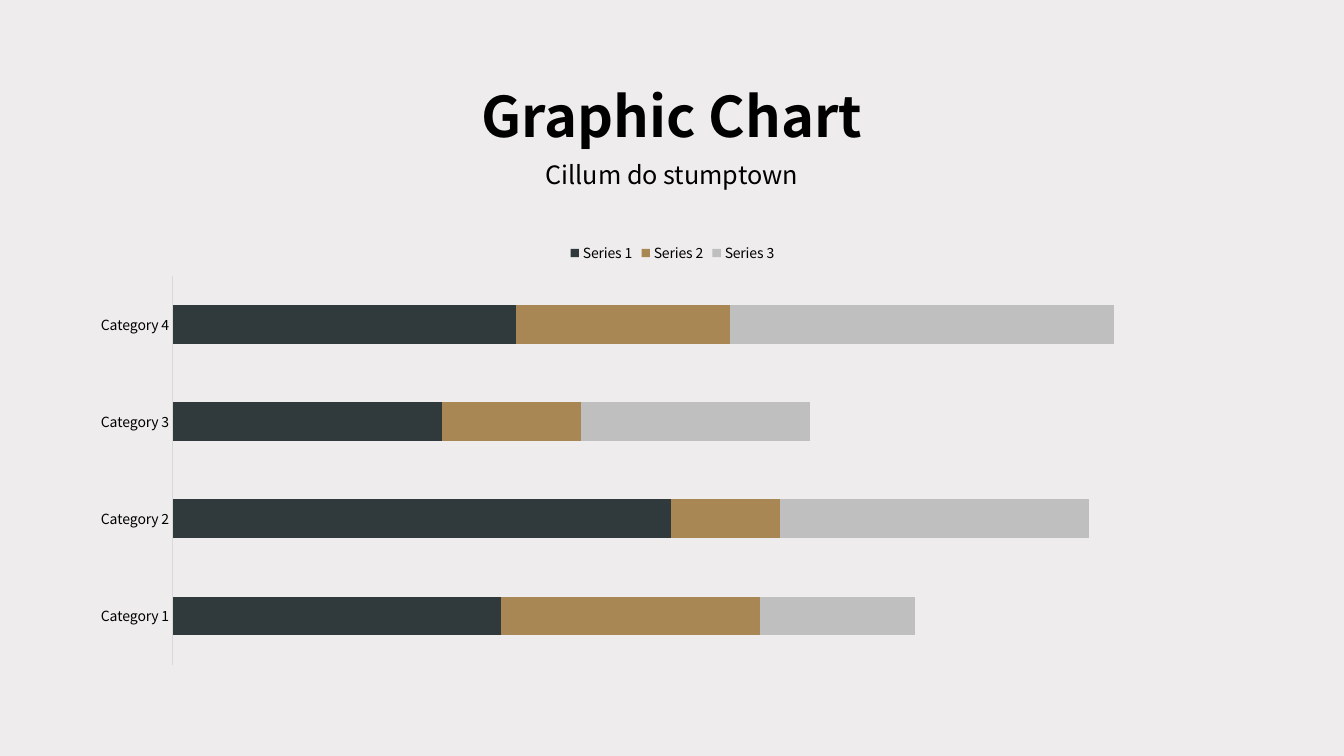
from dataclasses import dataclass

from lxml import etree
from pptx import Presentation
from pptx import util as u
from pptx.chart.data import CategoryChartData
from pptx.dml.color import RGBColor
from pptx.enum import chart as charts, text
from pptx.oxml.ns import qn


@dataclass(frozen=True)
class Theme:
    font: str = "Noto Sans CJK SC"
    background: str = "EEECED"
    ink: str = "000000"
    axis: str = "D9D9D9"
    series: tuple = ("30393C", "A88755", "BFBFBF")
    title_size: int = 40
    subtitle_size: int = 18
    chart_size: int = 10


def rgb(value):
    return RGBColor.from_string(value)


class SlideBuilder:
    def __init__(self, prs, theme):
        self.theme = theme
        self.slide = prs.slides.add_slide(prs.slide_layouts[0])
        fill = self.slide.background.fill
        fill.solid()
        fill.fore_color.rgb = rgb(theme.background)

    def style_font(self, font, size, bold=False):
        font.name = self.theme.font
        font.size = u.Pt(size)
        font.bold = bold
        font.color.rgb = rgb(self.theme.ink)

    def heading(self, index, wording, box, size, bold=False, wrap=True):
        """Fill, move and format the placeholder with the given index."""
        sp = self.slide.placeholders[index]
        sp.left, sp.top, sp.width, sp.height = map(u.Cm, box)
        tf = sp.text_frame
        tf.text = wording
        tf.word_wrap = wrap
        tf.auto_size = text.MSO_AUTO_SIZE.NONE
        tf.vertical_anchor = text.MSO_ANCHOR.TOP
        p = tf.paragraphs[0]
        p.alignment = text.PP_ALIGN.CENTER
        p.space_before = u.Pt(0)
        self.style_font(p.font, size, bold)

    def stacked_bars(self, categories, series, box, maximum, plot_area):
        data = CategoryChartData()
        data.categories = categories
        for name, values in series.items():
            data.add_series(name, values)
        chart = self.slide.shapes.add_chart(
            charts.XL_CHART_TYPE.BAR_STACKED, *map(u.Cm, box), data
        ).chart
        self.style_font(chart.font, self.theme.chart_size)
        chart.has_title = False
        chart.has_legend = True
        chart.legend.position = charts.XL_LEGEND_POSITION.TOP
        chart.legend.include_in_layout = False

        plot = chart.plots[0]
        plot.gap_width, plot.overlap = 150, 100
        plot.vary_by_categories = False
        for bars, color in zip(plot.series, self.theme.series):
            bars.format.fill.solid()
            bars.format.fill.fore_color.rgb = rgb(color)

        axis = chart.category_axis
        axis.major_tick_mark = charts.XL_TICK_MARK.NONE
        axis.format.line.color.rgb = rgb(self.theme.axis)
        axis.format.line.width = u.Pt(0.75)
        scale = chart.value_axis
        scale.minimum_scale, scale.maximum_scale = 0, maximum
        scale.has_major_gridlines = False
        scale.visible = False
        self.place_plot(chart, plot_area)

    @staticmethod
    def place_plot(chart, fractions):
        """Fix the inner plot area as fractions of the chart's frame."""
        area = chart.element.find(".//" + qn("c:plotArea"))
        for old in area.findall(qn("c:layout")):
            area.remove(old)
        layout = etree.Element(qn("c:layout"))
        manual = etree.SubElement(layout, qn("c:manualLayout"))
        settings = [("layoutTarget", "inner"), ("xMode", "edge"), ("yMode", "edge")]
        for tag, value in settings + list(zip("xywh", fractions)):
            etree.SubElement(manual, qn("c:" + tag)).set("val", str(value))
        area.insert(0, layout)


def main():
    prs = Presentation()
    prs.slide_width, prs.slide_height = u.Cm(33.87), u.Cm(19.05)
    theme = Theme()
    page = SlideBuilder(prs, theme)
    page.heading(0, "Graphic Chart", (10.19, 1.93, 13.49, 1.96),
                 theme.title_size, bold=True)
    page.heading(1, "Cillum do stumptown", (13.36, 3.89, 7.14, 1.02),
                 theme.subtitle_size, wrap=False)
    page.stacked_bars(
        [f"Category {n}" for n in range(1, 5)],
        {
            "Series 1": (66, 100, 54, 69),
            "Series 2": (52, 22, 28, 43),
            "Series 3": (31, 62, 46, 77),
        },
        box=(1.96, 5.84, 29.97, 11.13),
        maximum=215,
        plot_area=(0.08, 0.1, 0.9, 0.88),
    )
    prs.save("out.pptx")


if __name__ == "__main__":
    main()
